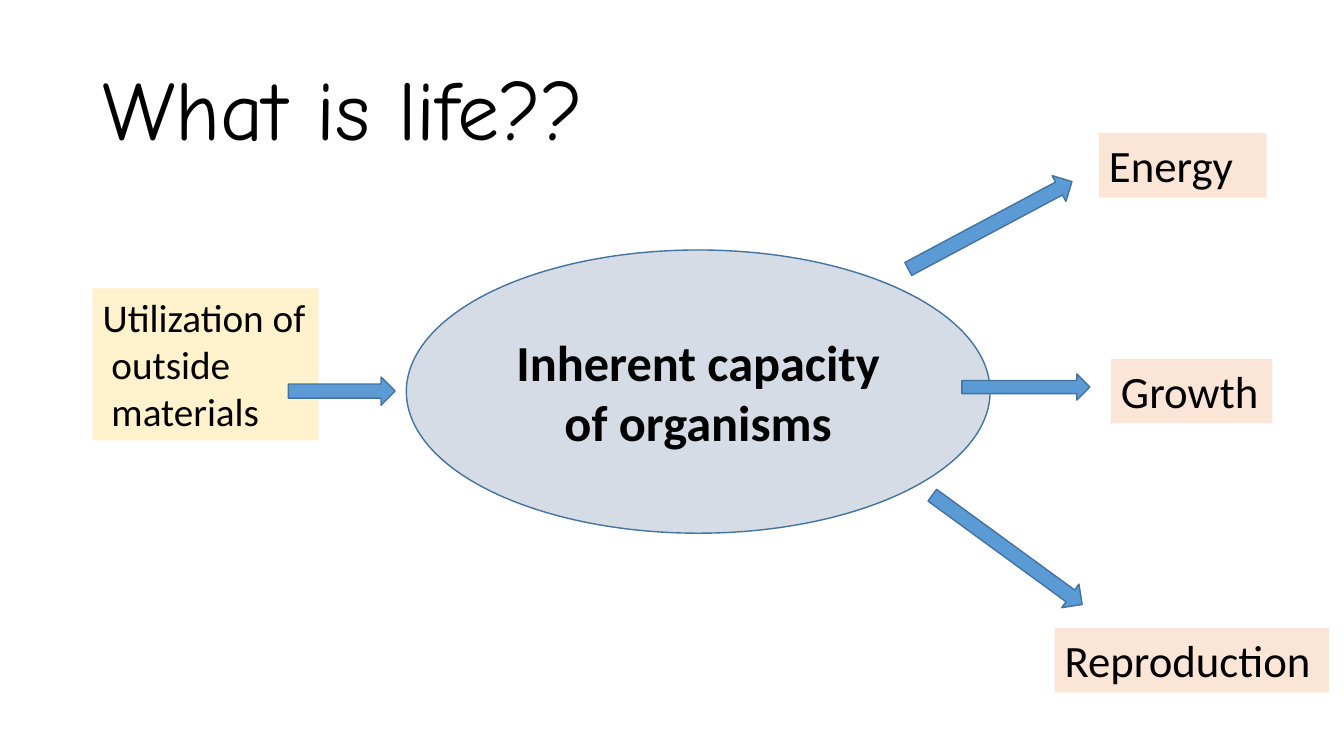
from pptx import Presentation
from pptx.dml.color import RGBColor
from pptx.enum.shapes import MSO_SHAPE as SHAPE
from pptx.enum.text import MSO_ANCHOR as ANCHOR, PP_ALIGN as ALIGN
from pptx.util import Pt

PX = 9144  # EMU per px, 100 px to the inch
BLACK = RGBColor(0x00, 0x00, 0x00)
BLUE = RGBColor(0x5B, 0x9B, 0xD5)
DARK_BLUE = RGBColor(0x43, 0x73, 0x9E)
GREY = RGBColor(0xD6, 0xDC, 0xE5)
YELLOW = RGBColor(0xFF, 0xF2, 0xCC)
PEACH = RGBColor(0xFB, 0xE5, 0xD6)

# Content: boxes are left, top, width, height in px
TITLE = ("What is life??", (92, 40, 1150, 145))
CAPACITY = ("Inherent capacity of organisms", (403, 248, 579, 281))
INPUT = (["Utilization of", " outside", " materials"], (92, 286, 224, 151))
OUTPUTS = [
    ("Energy", (1090, 132, 166, 64)),
    ("Growth", (1102, 356, 160, 64)),
    ("Reproduction", (1046, 623, 272, 64)),
]
ARROWS = [  # box, rotation in degrees
    ((286, 374, 106, 28), 0),
    ((890, 209, 184, 29), 331.9),
    ((907, 531, 184, 29), 36.1),
    ((954, 371, 127, 26), 0),
]

prs = Presentation()
prs.slide_width, prs.slide_height = 1333 * PX, 750 * PX
s = prs.slides.add_slide(prs.slide_layouts[6])


def emu(box):
    return [n * PX for n in box]


def add_shape(kind, box, fill, outlined=True):
    sp = s.shapes.add_shape(kind, *emu(box))
    sp.shadow.inherit = False
    sp.fill.solid()
    sp.fill.fore_color.rgb = fill
    if outlined:
        sp.line.color.rgb = DARK_BLUE
        sp.line.width = Pt(1)
    else:
        sp.line.fill.background()
    return sp


def write(sp, lines, size, font="Calibri", bold=False, align=ALIGN.LEFT,
          anchor=ANCHOR.TOP, wrap=True, spacing=1.0):
    tf = sp.text_frame
    tf.word_wrap = wrap
    tf.vertical_anchor = anchor
    for i, line in enumerate(lines):
        p = tf.add_paragraph() if i else tf.paragraphs[0]
        p.alignment = align
        p.line_spacing = spacing
        r = p.add_run()
        r.text = line
        r.font.name = font
        r.font.size = Pt(size)
        r.font.bold = bold
        r.font.color.rgb = BLACK


# Title
text, box = TITLE
write(s.shapes.add_textbox(*emu(box)), [text], 60, font="Comic Neue",
      anchor=ANCHOR.MIDDLE, spacing=0.9)

# Central ellipse
text, box = CAPACITY
write(add_shape(SHAPE.OVAL, box, GREY), [text], 36, bold=True,
      align=ALIGN.CENTER, anchor=ANCHOR.MIDDLE)

# Input box
lines, box = INPUT
write(add_shape(SHAPE.RECTANGLE, box, YELLOW, outlined=False), lines, 28,
      wrap=False)

# Arrows
for box, angle in ARROWS:
    add_shape(SHAPE.RIGHT_ARROW, box, BLUE).rotation = angle

# Output boxes
for text, box in OUTPUTS:
    write(add_shape(SHAPE.RECTANGLE, box, PEACH, outlined=False), [text], 32)

prs.save("out.pptx")
